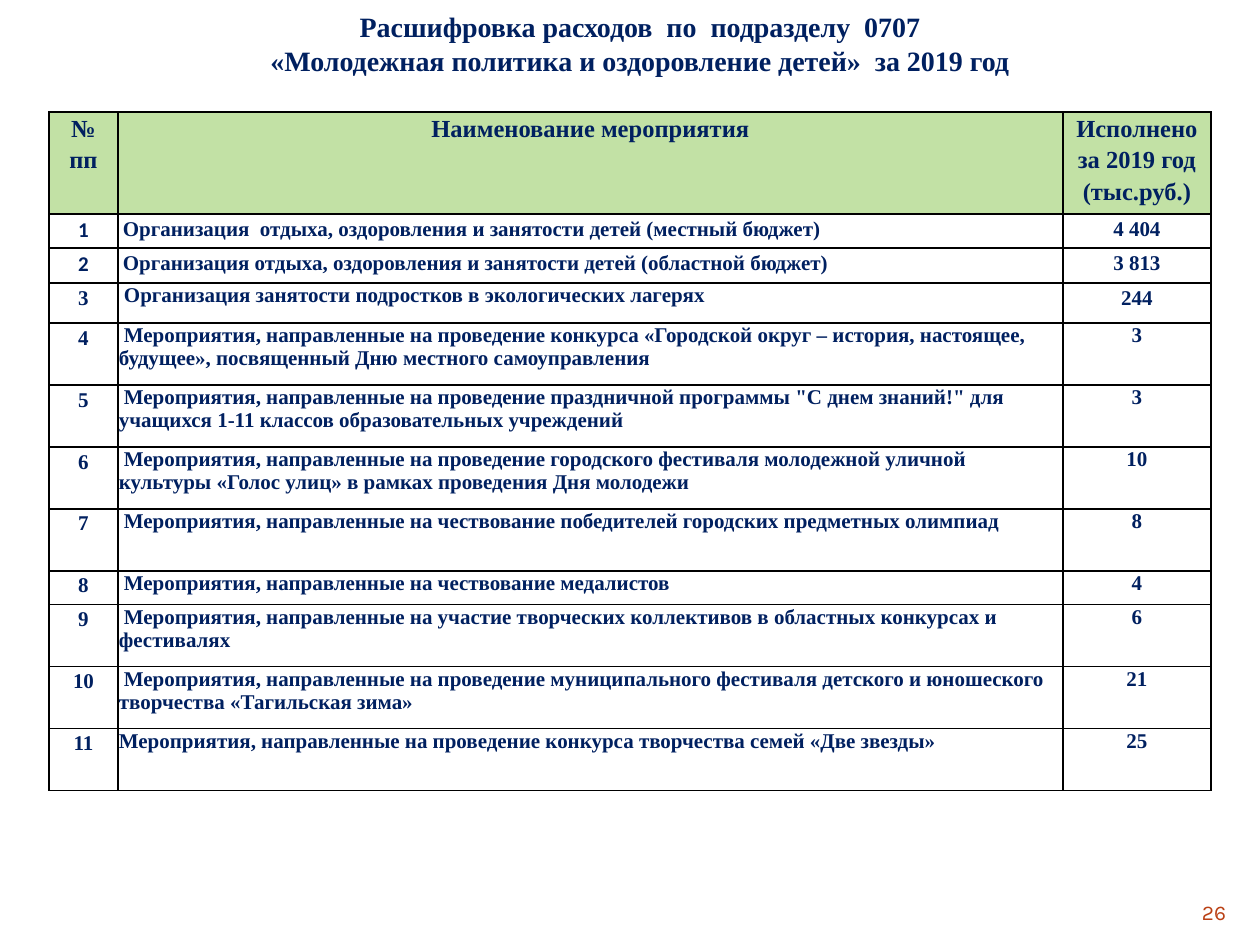
from lxml.etree import SubElement
from pptx import Presentation
from pptx.dml.color import RGBColor
from pptx.enum.text import MSO_ANCHOR, PP_ALIGN
from pptx.oxml.ns import qn
from pptx.util import Emu, Pt

EMU_PER_PX = 914400 / 126
SERIF = "Times New Roman"
NAVY = "002060"
GREEN = "C2E1A5"
COLUMN_WIDTHS = [69, 945, 148]
HEADER_HEIGHT = 102
WIDE, NARROW = (5, 0, 5, 0), (1, 1, 1, 0)
INDENT = 5
HEADINGS = [
    ["№", "пп"],
    ["Наименование мероприятия"],
    ["Исполнено", "за 2019 год", "(тыс.руб.)"],
]
EVENTS = [
    ("Организация  отдыха, оздоровления и занятости детей (местный бюджет)", "4 404", 34),
    ("Организация отдыха, оздоровления и занятости детей (областной бюджет)", "3 813", 35),
    ("Организация занятости подростков в экологических лагерях", "244", 40),
    ("Мероприятия, направленные на проведение конкурса «Городской округ – история, настоящее, "
     "будущее», посвященный Дню местного самоуправления", "3", 62),
    ("Мероприятия, направленные на проведение праздничной программы \"С днем знаний!\" для "
     "учащихся 1-11 классов образовательных учреждений", "3", 62),
    ("Мероприятия, направленные на проведение городского фестиваля молодежной уличной "
     "культуры «Голос улиц» в рамках проведения Дня молодежи", "10", 62),
    ("Мероприятия, направленные на чествование победителей городских предметных олимпиад", "8", 62),
    ("Мероприятия, направленные на чествование медалистов", "4", 34),
    ("Мероприятия, направленные на участие творческих коллективов в областных конкурсах и "
     "фестивалях", "6", 62),
    ("Мероприятия, направленные на проведение муниципального фестиваля детского и юношеского "
     "творчества «Тагильская зима»", "21", 62),
    ("Мероприятия, направленные на проведение конкурса творчества семей «Две звезды»", "25", 62),
]


def px(length):
    """Turn pixels into EMU."""
    return Emu(round(length * EMU_PER_PX))


def color(value):
    """Turn a hex string into a colour."""
    return RGBColor.from_string(value)


def set_margins(holder, margins):
    """Set the left, top, right and bottom margins of a frame or cell."""
    sides = ("margin_left", "margin_top", "margin_right", "margin_bottom")
    for side, margin in zip(sides, margins):
        setattr(holder, side, px(margin))


def write(frame, lines, size, align=PP_ALIGN.CENTER, font=SERIF, ink=NAVY,
          bold=True, spacing=1.0, indent=0):
    """Write each line as a paragraph in one style."""
    for number, line in enumerate(lines):
        para = frame.add_paragraph() if number else frame.paragraphs[0]
        para.text = line
        para.alignment = align
        para.line_spacing = spacing
        if indent:
            para._p.get_or_add_pPr().set("indent", str(px(indent)))
        para.font.size = Pt(size)
        para.font.name = font
        para.font.bold = bold
        para.font.color.rgb = color(ink)


def add_text(slide, place, lines, margins, size, **style):
    """Add a wrapping text box."""
    box = slide.shapes.add_textbox(*map(px, place))
    frame = box.text_frame
    frame.word_wrap = True
    frame.vertical_anchor = MSO_ANCHOR.TOP
    set_margins(frame, margins)
    write(frame, lines, size, **style)


def add_borders(cell):
    """Draw thin black lines on all sides of a cell."""
    properties = cell._tc.get_or_add_tcPr()
    for side in ("a:lnL", "a:lnR", "a:lnT", "a:lnB"):
        line = SubElement(properties, qn(side), w=str(Pt(1)))
        fill = SubElement(line, qn("a:solidFill"))
        SubElement(fill, qn("a:srgbClr"), val="000000")


def fill_cell(cell, lines, size=12, margins=WIDE, fill=None, **style):
    """Set the borders, fill, margins and text of a cell."""
    add_borders(cell)
    if fill:
        cell.fill.solid()
        cell.fill.fore_color.rgb = color(fill)
    else:
        cell.fill.background()
    set_margins(cell, margins)
    cell.vertical_anchor = MSO_ANCHOR.TOP
    write(cell.text_frame, lines, size, **style)


def add_expense_table(slide):
    """Add the table of events and expenses."""
    heights = [HEADER_HEIGHT] + [height for _, _, height in EVENTS]
    place = (49, 112, sum(COLUMN_WIDTHS), sum(heights))
    table = slide.shapes.add_table(len(heights), len(COLUMN_WIDTHS), *map(px, place)).table
    table.first_row = table.horz_banding = False
    for column, width in zip(table.columns, COLUMN_WIDTHS):
        column.width = px(width)
    for row, height in zip(table.rows, heights):
        row.height = px(height)
    for index, heading in enumerate(HEADINGS):
        fill_cell(table.cell(0, index), heading, size=14, fill=GREEN, spacing=1.15)
    loose = {"margins": WIDE, "spacing": 1.15}
    tight = {"margins": NARROW}
    for number, (event, amount, _) in enumerate(EVENTS, 1):
        fill_cell(table.cell(number, 0), [str(number)], **loose,
                  font="Calibri" if number <= 2 else SERIF)
        fill_cell(table.cell(number, 1), [event], align=PP_ALIGN.LEFT,
                  indent=INDENT if 2 < number < len(EVENTS) else 0,
                  **(loose if number <= 2 else tight))
        fill_cell(table.cell(number, 2), [amount], **(loose if number <= 3 else tight))


def main():
    """Build and save the deck."""
    deck = Presentation()
    deck.slide_width, deck.slide_height = px(1260), px(945)
    slide = deck.slides.add_slide(deck.slide_layouts[6])
    add_text(slide, (1134, 892, 105, 34), ["26"], (13, 8, 13, 0), 12,
             align=PP_ALIGN.RIGHT, font="Karla", ink="BA4014", bold=False)
    title = ["Расшифровка расходов  по  подразделу  0707",
             "«Молодежная политика и оздоровление детей»  за 2019 год"]
    add_text(slide, (49, 0, 1182, 176), title, (13, 10, 13, 0), 16)
    add_expense_table(slide)
    deck.save("out.pptx")


if __name__ == "__main__":
    main()
